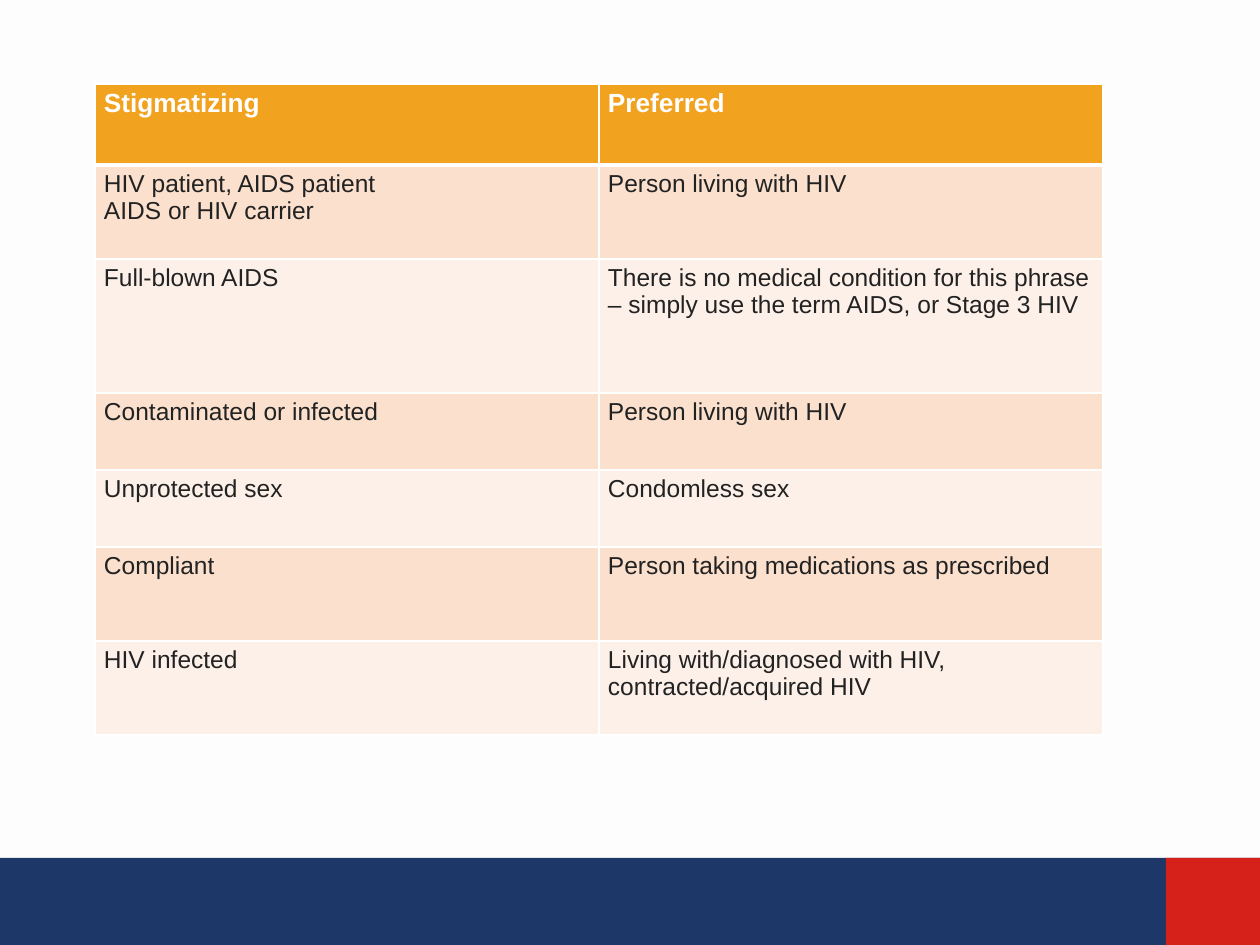
from lxml import etree
from pptx import Presentation
from pptx import util as u
from pptx.dml.color import RGBColor
from pptx.enum import shapes
from pptx.oxml.ns import qn

WHITE = RGBColor(0xFF, 0xFF, 0xFF)
PAPER = RGBColor(0xFD, 0xFD, 0xFD)
NAVY = RGBColor(0x1C, 0x37, 0x68)
RED = RGBColor(0xD6, 0x20, 0x1A)
ORANGE = RGBColor(0xF1, 0xA2, 0x1F)
PEACH = RGBColor(0xFA, 0xE0, 0xCD)
CREAM = RGBColor(0xFC, 0xF0, 0xE8)
INK = RGBColor(0x22, 0x22, 0x22)

TERMS = [
    (81, "Stigmatizing", "Preferred"),
    (94, "HIV patient, AIDS patient\nAIDS or HIV carrier", "Person living with HIV"),
    (134, "Full-blown AIDS",
     "There is no medical condition for this phrase – simply use the term AIDS, or Stage 3 HIV"),
    (77, "Contaminated or infected", "Person living with HIV"),
    (77, "Unprotected sex", "Condomless sex"),
    (94, "Compliant", "Person taking medications as prescribed"),
    (94, "HIV infected", "Living with/diagnosed with HIV, contracted/acquired HIV"),
]
FOOTER = [(0, 1260, NAVY), (1166, 94, RED)]
FOOTER_TOP, FOOTER_HEIGHT = 858, 87
TABLE_LEFT, TABLE_TOP, COLUMN_WIDTH = 95, 84, 504
HEADER_FONT = {"name": "Arial", "size": u.Pt(15), "bold": True}
BODY_FONT = {"name": "Arial", "size": u.Pt(14), "bold": False}


def px(length):
    return u.Emu(round(length * 914400 / 126))


MARGINS = {"margin_left": px(9), "margin_right": px(9),
           "margin_top": px(5), "margin_bottom": px(5)}


def set_all(target, values):
    for name, value in values.items():
        setattr(target, name, value)


def add_borders(cell, widths):
    properties = cell._tc.get_or_add_tcPr()
    for side, width in widths.items():
        line = etree.SubElement(properties, qn(f"a:ln{side}"), w=str(u.Pt(width)))
        fill = etree.SubElement(line, qn("a:solidFill"))
        etree.SubElement(fill, qn("a:srgbClr"), val=str(WHITE))


def fill_cell(cell, words, row):
    header = row == 0
    set_all(cell, MARGINS)
    add_borders(cell, {"L": 1, "R": 1, "T": 3 if row == 1 else 1, "B": 3 if header else 1})
    cell.fill.solid()
    cell.fill.fore_color.rgb = ORANGE if header else PEACH if row % 2 else CREAM
    cell.text_frame.text = words
    for para in cell.text_frame.paragraphs:
        set_all(para.font, HEADER_FONT if header else BODY_FONT)
        para.font.color.rgb = WHITE if header else INK


def main():
    deck = Presentation()
    set_all(deck, {"slide_width": u.Inches(10), "slide_height": u.Inches(7.5)})
    page = deck.slides.add_slide(deck.slide_layouts[6])
    page.background.fill.solid()
    page.background.fill.fore_color.rgb = PAPER

    for left, width, color in FOOTER:
        band = page.shapes.add_shape(shapes.MSO_SHAPE.RECTANGLE, px(left), px(FOOTER_TOP),
                                     px(width), px(FOOTER_HEIGHT))
        band.shadow.inherit = False
        band.fill.solid()
        band.fill.fore_color.rgb = color
        band.line.fill.background()

    table = page.shapes.add_table(
        len(TERMS), 2, px(TABLE_LEFT), px(TABLE_TOP), px(2 * COLUMN_WIDTH),
        px(sum(height for height, *_ in TERMS))).table
    for column in table.columns:
        column.width = px(COLUMN_WIDTH)
    for row, (height, *pair) in enumerate(TERMS):
        table.rows[row].height = px(height)
        for column, words in enumerate(pair):
            fill_cell(table.cell(row, column), words, row)

    deck.save("out.pptx")


if __name__ == "__main__":
    main()
